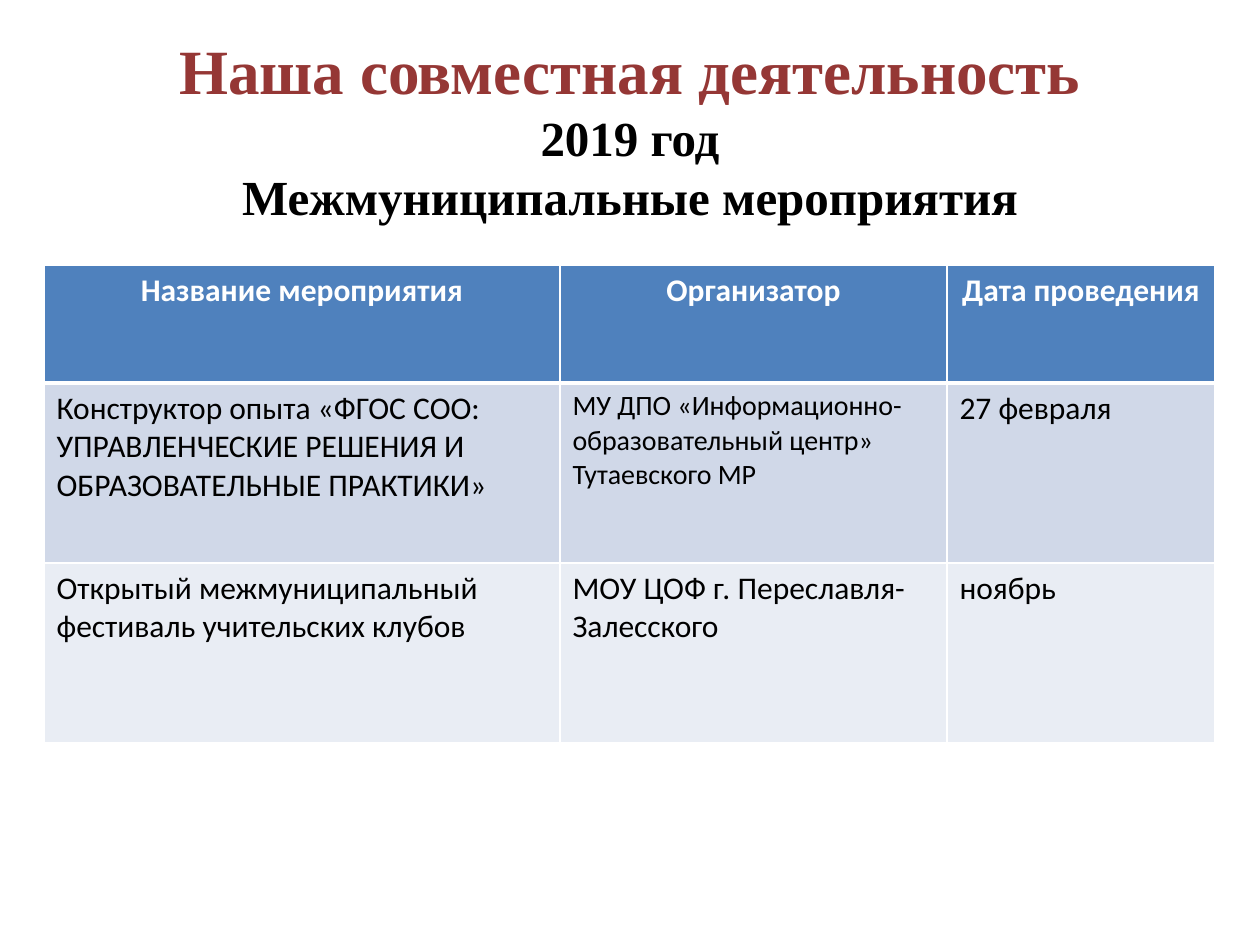
from lxml.etree import SubElement
from pptx import Presentation
from pptx.dml.color import RGBColor
from pptx.enum.text import MSO_ANCHOR, PP_ALIGN
from pptx.oxml.ns import qn
from pptx.util import Pt

SCALE = 914400 // 126
COLORS = {
    "title": "953735", "text": "000000", "white": "FFFFFF",
    "head": "4F81BD", "odd": "D0D8E8", "even": "E9EDF4",
}
TITLE = [
    ("Наша совместная деятельность", 36, "title"),
    ("2019 год", 28, "text"),
    ("Межмуниципальные мероприятия", 28, "text"),
]
COLS = [516, 387, 268]
ROWS = [
    (118, "head", ["Название мероприятия", "Организатор", "Дата проведения"]),
    (180, "odd", [
        "Конструктор опыта «ФГОС СОО: УПРАВЛЕНЧЕСКИЕ РЕШЕНИЯ И ОБРАЗОВАТЕЛЬНЫЕ ПРАКТИКИ»",
        "МУ ДПО «Информационно-образовательный центр» Тутаевского МР",
        "27 февраля",
    ]),
    (180, "even", [
        "Открытый межмуниципальный фестиваль учительских клубов",
        "МОУ ЦОФ г. Переславля-Залесского",
        "ноябрь",
    ]),
]
SMALL = (1, 1)


def px(*sizes):
    return [size * SCALE for size in sizes]


def add_run(para, text, size, color, name, bold):
    run = para.add_run()
    run.text = text
    style = {"size": Pt(size), "name": name, "bold": bold}
    for key, value in style.items():
        setattr(run.font, key, value)
    run.font.color.rgb = RGBColor.from_string(COLORS[color])


def add_title(slide):
    frame = slide.shapes.add_textbox(*px(63, 76, 1134, 179)).text_frame
    style = {
        "word_wrap": True,
        "vertical_anchor": MSO_ANCHOR.MIDDLE,
        "margin_bottom": 80 * SCALE,
    }
    for key, value in style.items():
        setattr(frame, key, value)
    para = frame.paragraphs[0]
    para.alignment = PP_ALIGN.CENTER
    for row, (text, size, color) in enumerate(TITLE):
        if row:
            para.add_line_break()
        add_run(para, text, size, color, "Times New Roman", True)


def add_edges(cell, widths):
    props = cell._tc.get_or_add_tcPr()
    for spot, (side, width) in enumerate(widths.items()):
        line = SubElement(props, qn(f"a:ln{side}"), w=str(Pt(width)))
        fill = SubElement(line, qn("a:solidFill"))
        SubElement(fill, qn("a:srgbClr"), val=COLORS["white"])
        props.insert(spot, line)


def fill_cell(cell, text, size, shade, head):
    cell.fill.solid()
    cell.fill.fore_color.rgb = RGBColor.from_string(COLORS[shade])
    para = cell.text_frame.paragraphs[0]
    para.alignment = PP_ALIGN.CENTER if head else PP_ALIGN.LEFT
    add_run(para, text, size, "white" if head else "text", "Calibri", head)


def add_grid(slide):
    high = sum(row[0] for row in ROWS)
    box = px(44, 265, sum(COLS), high)
    table = slide.shapes.add_table(len(ROWS), len(COLS), *box).table
    for col, width in zip(table.columns, px(*COLS)):
        col.width = width
    for row, (height, shade, texts) in enumerate(ROWS):
        table.rows[row].height = height * SCALE
        for col, text in enumerate(texts):
            cell = table.cell(row, col)
            size = 16 if (row, col) == SMALL else 18
            fill_cell(cell, text, size, shade, row == 0)
            add_edges(cell, {
                "L": 1, "R": 1,
                "T": 3 if row == 1 else 1,
                "B": 3 if row == 0 else 1,
            })


def main():
    deck = Presentation()
    deck.slide_width, deck.slide_height = px(1260, 945)
    slide = deck.slides.add_slide(deck.slide_layouts[6])
    add_title(slide)
    add_grid(slide)
    deck.save("out.pptx")


if __name__ == "__main__":
    main()
